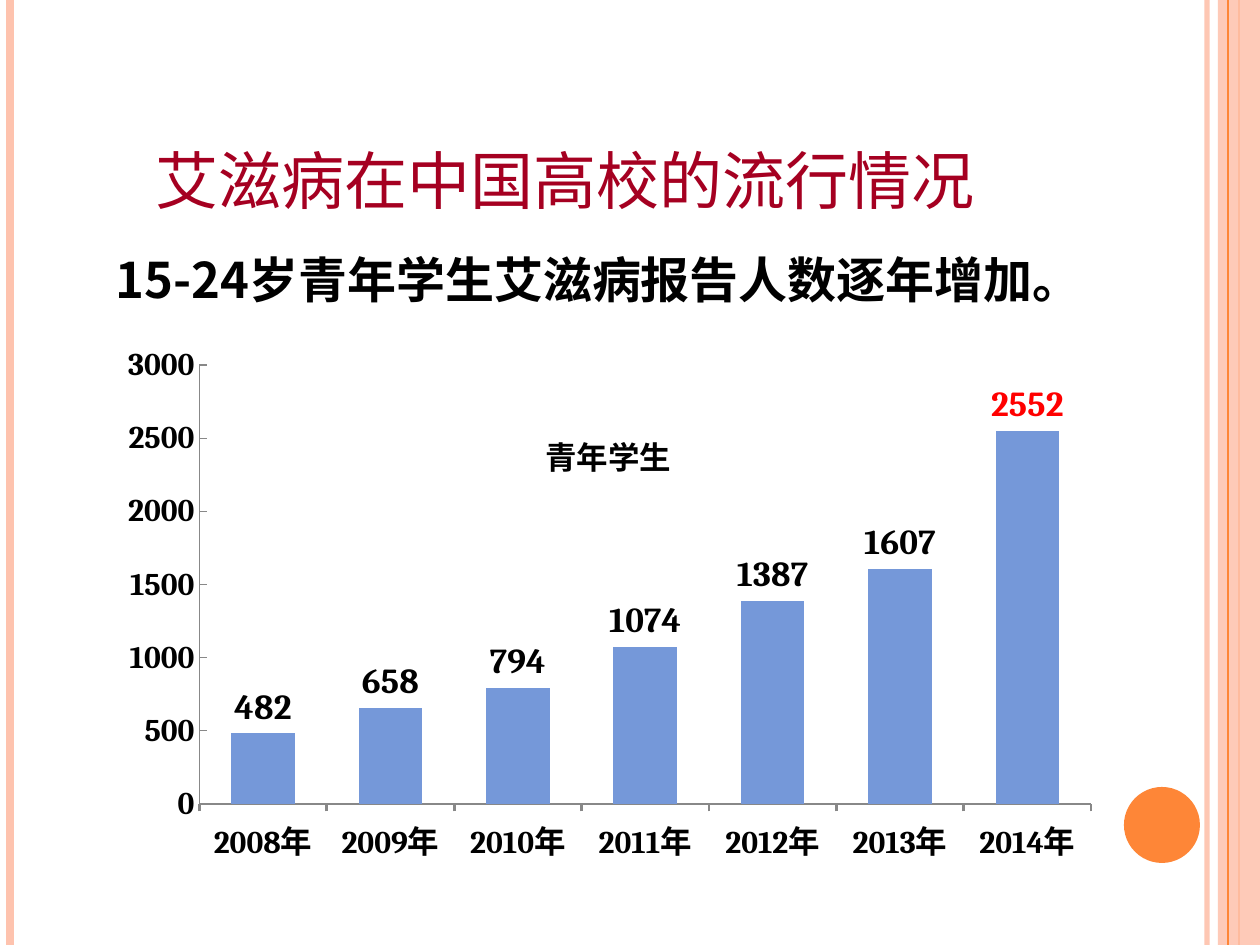
from lxml import etree
from pptx import Presentation
from pptx.chart.data import CategoryChartData
from pptx.dml.color import RGBColor
from pptx.enum.chart import XL_CHART_TYPE as ChartType
from pptx.enum.chart import XL_LABEL_POSITION as LabelPosition
from pptx.enum.chart import XL_TICK_MARK as TickMark
from pptx.enum.shapes import MSO_CONNECTOR as Connector
from pptx.enum.shapes import MSO_SHAPE as Shape
from pptx.enum.text import MSO_ANCHOR as Anchor
from pptx.oxml import parse_xml
from pptx.oxml.ns import nsdecls, qn
from pptx.util import Pt

PX = 914400 / 126
PAGE = (0, 0, 1260, 945)

PEACH = RGBColor(0xFE, 0xC3, 0xAE)
ORANGE = RGBColor(0xFE, 0x86, 0x37)
CRIMSON = RGBColor(0xA5, 0x00, 0x21)
BLUE = RGBColor(0x75, 0x98, 0xD9)
GRAY = RGBColor(0x88, 0x88, 0x88)
BLACK = RGBColor(0, 0, 0)
RED = RGBColor(0xFF, 0, 0)

SANS = "Noto Sans CJK SC"
SERIF = "Cambria"
TITLE = dict(name=SANS, size=Pt(36), bold=False, color=CRIMSON)
SUBTITLE = dict(name=SANS, size=Pt(28), bold=True, color=BLACK)
AXIS = dict(name=SERIF, size=Pt(18), bold=True, color=BLACK)
VALUE = dict(AXIS, size=Pt(20))
HIGHLIGHT = dict(VALUE, color=RED)

CASES = {2008: 482, 2009: 658, 2010: 794, 2011: 1074, 2012: 1387, 2013: 1607, 2014: 2552}


def emu(*lengths):
    return [round(length * PX) for length in lengths]


def set_font(font, style):
    for key, value in style.items():
        if key == "color":
            font.color.rgb = value
        else:
            setattr(font, key, value)


def set_alpha(part, percent):
    color = next(part._element.spPr.iter(qn("a:srgbClr")))
    etree.SubElement(color, qn("a:alpha"), val=str(percent * 1000))


def add_stripe(page, x, box, color, width):
    left, top, _, height = box
    line = page.shapes.add_connector(
        Connector.STRAIGHT, *emu(left + x, top, left + x, top + height))
    line.line.color.rgb = color
    line.line.width = Pt(width)
    etree.SubElement(line._element.spPr, qn("a:effectLst"))
    return line


def add_solid(page, kind, box, color):
    solid = page.shapes.add_shape(kind, *emu(*box))
    solid.shadow.inherit = False
    solid.fill.solid()
    solid.fill.fore_color.rgb = color
    solid.line.fill.background()
    return solid


def add_frame(page, box):
    """Place the side stripes, the right band and the orange disc."""
    left, top, _, height = box
    set_alpha(add_stripe(page, 1207, box, PEACH, 3), 93)
    add_stripe(page, 10, box, PEACH, 4.5)
    add_stripe(page, 1239, box, ORANGE, 1.5)
    band = add_solid(page, Shape.RECTANGLE, (left + 1218, top, 42, height), PEACH)
    set_alpha(band, 87)
    add_stripe(page, 1228, box, ORANGE, 0.75)
    add_solid(page, Shape.OVAL, (left + 1124, top + 787, 76, 76), ORANGE)


def add_text(page, box, text, style, anchor):
    frame = page.shapes.add_textbox(*emu(*box)).text_frame
    layout = dict(word_wrap=True, vertical_anchor=anchor, margin_left=0,
                  margin_top=0, margin_right=0, margin_bottom=0)
    for key, value in layout.items():
        setattr(frame, key, value)
    span = frame.paragraphs[0].add_run()
    span.text = text
    set_font(span.font, style)
    etree.SubElement(span._r.get_or_add_rPr(), qn("a:ea"), typeface=style["name"])


def manual_layout(x, y, size=None):
    """Return a chart layout; a size makes it the inner plot area."""
    values = {"layoutTarget": "inner"} if size else {}
    values.update(xMode="edge", yMode="edge", x=x, y=y)
    if size:
        values.update(w=size[0], h=size[1])
    parts = "".join(f'<c:{key} val="{value}"/>' for key, value in values.items())
    return parse_xml(f'<c:layout {nsdecls("c")}><c:manualLayout>{parts}'
                     '</c:manualLayout></c:layout>')


def format_axis(axis, tick, width):
    axis.has_major_gridlines = False
    axis.major_tick_mark = tick
    axis.minor_tick_mark = TickMark.NONE
    axis.format.line.color.rgb = GRAY
    axis.format.line.width = Pt(width)
    set_font(axis.tick_labels.font, AXIS)


def add_case_chart(page, box):
    data = CategoryChartData()
    data.categories = [f"{year}年" for year in CASES]
    data.add_series("青年学生", list(CASES.values()))
    chart = page.shapes.add_chart(ChartType.COLUMN_CLUSTERED, *emu(*box), data).chart
    set_font(chart.font, dict(name=SERIF, size=Pt(10), color=BLACK))
    chart.has_legend = False

    chart.has_title = True
    title = chart.chart_title
    span = title.text_frame.paragraphs[0].add_run()
    span.text = "青年学生"
    set_font(span.font, AXIS)
    title_xml = title._element
    for old in title_xml.findall(qn("c:layout")):
        title_xml.remove(old)
    title_xml.find(qn("c:tx")).addnext(manual_layout(0.44, 0.15))
    title.include_in_layout = False
    title_xml.find(qn("c:overlay")).set("val", "1")

    area = chart._chartSpace.chart.plotArea
    for old in area.findall(qn("c:layout")):
        area.remove(old)
    area.insert(0, manual_layout(0.11, 0.04, (0.865, 0.833)))

    format_axis(chart.category_axis, TickMark.OUTSIDE, 1.5)
    format_axis(chart.value_axis, TickMark.INSIDE, 0.75)
    for key, value in dict(minimum_scale=0, maximum_scale=3000, major_unit=500).items():
        setattr(chart.value_axis, key, value)

    plot = chart.plots[0]
    plot.gap_width = 100
    plot.vary_by_categories = False
    series = plot.series[0]
    series.format.fill.solid()
    series.format.fill.fore_color.rgb = BLUE
    labels = series.data_labels
    labels.show_value = True
    labels.position = LabelPosition.OUTSIDE_END
    set_font(labels.font, VALUE)
    latest = series.points[len(CASES) - 1].data_label
    set_font(latest.font, HIGHLIGHT)
    latest.position = LabelPosition.OUTSIDE_END


def main():
    deck = Presentation()
    deck.slide_width, deck.slide_height = emu(*PAGE[2:])
    page = deck.slides.add_slide(deck.slide_layouts[6])
    add_frame(page, PAGE)
    add_text(page, (116, 249, 1080, 71), "15-24岁青年学生艾滋病报告人数逐年增加。",
             SUBTITLE, Anchor.TOP)
    add_text(page, (156, 135, 1020, 88), "艾滋病在中国高校的流行情况",
             TITLE, Anchor.MIDDLE)
    add_case_chart(page, (86, 344, 1031, 527))
    deck.save("out.pptx")


if __name__ == "__main__":
    main()
